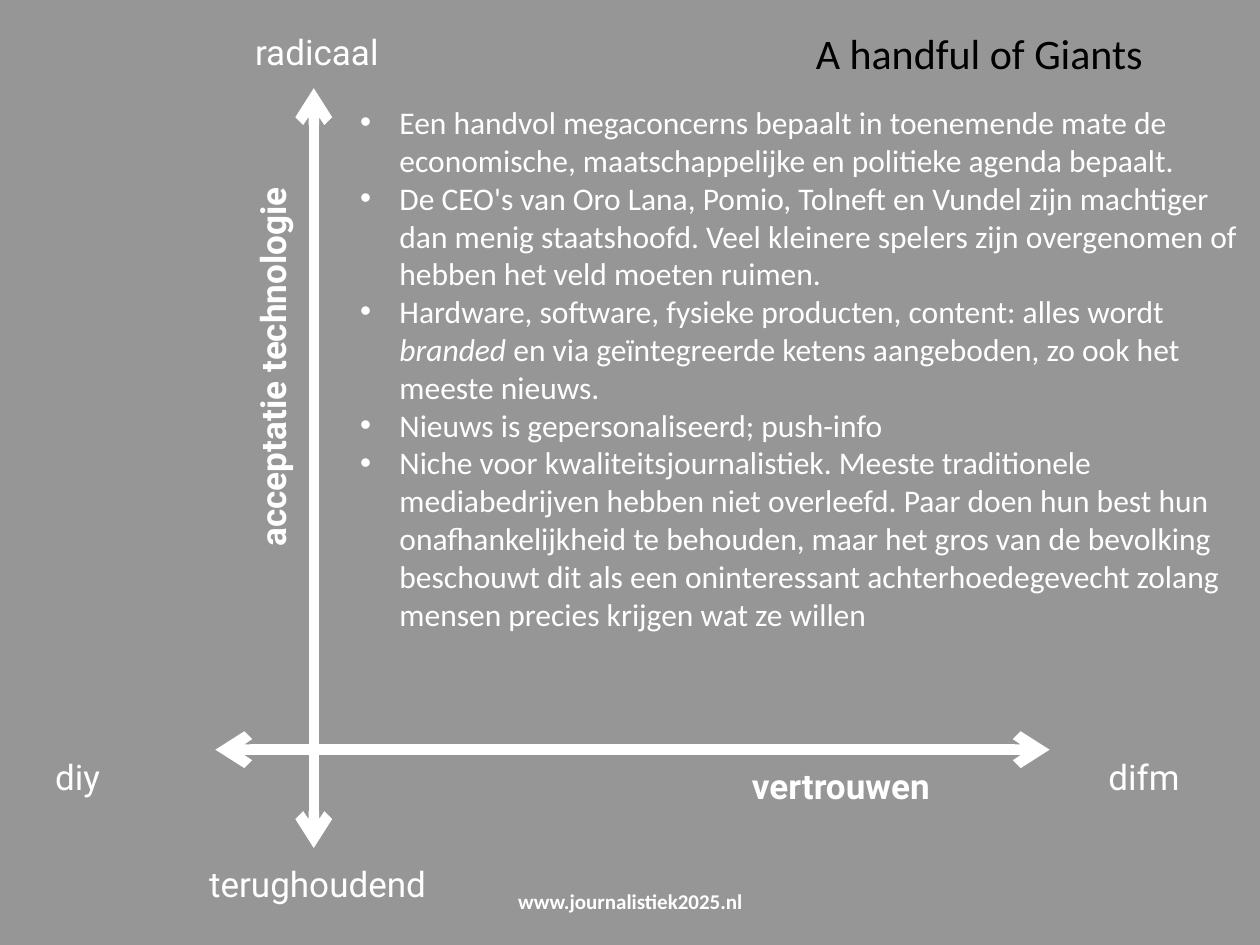
"""Builds a scenario slide with two crossing axes and a bulleted story."""
from lxml import etree
from pptx import Presentation
from pptx import util as u
from pptx.dml.color import RGBColor
from pptx.enum import shapes, text
from pptx.oxml.ns import qn

WHITE, BLACK, GREY = "FFFFFF", "000000", "969696"
LEFT, MID, RIGHT = text.PP_ALIGN.LEFT, text.PP_ALIGN.CENTER, text.PP_ALIGN.RIGHT
TITLE = "A handful of Giants"
SITE = "www.journalistiek2025.nl"
AXES = [(179.3, 484.6, 179.3, 50.4), (123.1, 428.4, 599.8, 428.4)]
ENDS = [
    ("difm", (566.6, 428.4, 174.2, 31.7)),
    ("diy", (-48.2, 428.4, 185, 31.7)),
    ("radicaal", (98.6, 13.7, 164.9, 31.7)),
    ("terughoudend", (99.4, 489.6, 164.2, 31.7)),
]
NAMES = [
    ("vertrouwen", (422.6, 433.4, 331.2, 31.7), 0),
    ("acceptatie technologie", (8.6, 156.2, 294.5, 31.7), 270),
]
STORY = [
    ["Een handvol megaconcerns bepaalt in toenemende mate de economische, "
     "maatschappelijke en politieke agenda bepaalt."],
    ["De CEO's van Oro Lana, Pomio, Tolneft en Vundel zijn machtiger dan menig "
     "staatshoofd. Veel kleinere spelers zijn overgenomen of hebben het veld "
     "moeten ruimen."],
    ["Hardware, software, fysieke producten, content: alles wordt ", "branded ",
     "en via geïntegreerde ketens aangeboden, zo ook het meeste nieuws."],
    ["Nieuws is gepersonaliseerd; push-info"],
    ["Niche voor kwaliteitsjournalistiek. Meeste traditionele mediabedrijven hebben "
     "niet overleefd. Paar doen hun best hun onafhankelijkheid te behouden, maar het "
     "gros van de bevolking beschouwt dit als een oninteressant achterhoedegevecht "
     "zolang mensen precies krijgen wat ze willen"],
]


def hue(code):
    return RGBColor.from_string(code)


def write(paras, area, box=None, font="Roboto", size=20, color=WHITE, bold=False,
          align=LEFT, anchor=text.MSO_ANCHOR.TOP, turn=0, bullet=False):
    area = [u.Pt(v) for v in area]
    box = box or slide.shapes.add_textbox(*area)
    box.left, box.top, box.width, box.height = area
    box.rotation = turn
    frame = box.text_frame
    frame.word_wrap, frame.auto_size = True, text.MSO_AUTO_SIZE.NONE
    frame.vertical_anchor = anchor
    for i, runs in enumerate(paras):
        para = frame.add_paragraph() if i else frame.paragraphs[0]
        para.alignment = align
        if bullet:
            props = para._p.get_or_add_pPr()
            props.set("marL", str(u.Pt(22.5)))
            props.set("indent", str(-u.Pt(22.5)))
            etree.SubElement(props, qn("a:buFont")).set("typeface", "Arial")
            etree.SubElement(props, qn("a:buChar")).set("char", "•")
        for j, words in enumerate(runs):
            run = para.add_run()
            run.text = words
            face = run.font
            face.name, face.size, face.bold = font, u.Pt(size), bold
            face.italic = j == 1
            face.color.rgb = hue(color)


def arrow(ends):
    line = slide.shapes.add_connector(
        shapes.MSO_CONNECTOR.STRAIGHT, *[u.Pt(v) for v in ends])
    line.line.width = u.Pt(6)
    line.line.color.rgb = hue(WHITE)
    for tag in ("a:headEnd", "a:tailEnd"):
        etree.SubElement(line.line._get_or_add_ln(), qn(tag)).set("type", "arrow")
    etree.SubElement(line._element.spPr, qn("a:effectLst"))


deck = Presentation()
deck.slide_width, deck.slide_height = u.Pt(720), u.Pt(540)
slide = deck.slides.add_slide(deck.slide_layouts[5])
slide.background.fill.solid()
slide.background.fill.fore_color.rgb = hue(GREY)

for ends in AXES:
    arrow(ends)
for words, area, turn in NAMES:
    write([[words]], area, bold=True, turn=turn)
for words, area in ENDS:
    write([[words]], area, align=MID)
write(STORY, (198.7, 55.4, 518.4, 378), font="Calibri", size=18, bullet=True)
write([[TITLE]], (450.7, 12.2, 209.5, 36.7), box=slide.shapes.title,
      font="Calibri", size=24, color=BLACK, align=RIGHT)
write([[SITE]], (246.2, 500.4, 228.2, 28.8), font="Calibri", size=12, bold=True,
      align=MID, anchor=text.MSO_ANCHOR.MIDDLE)
deck.save("out.pptx")
